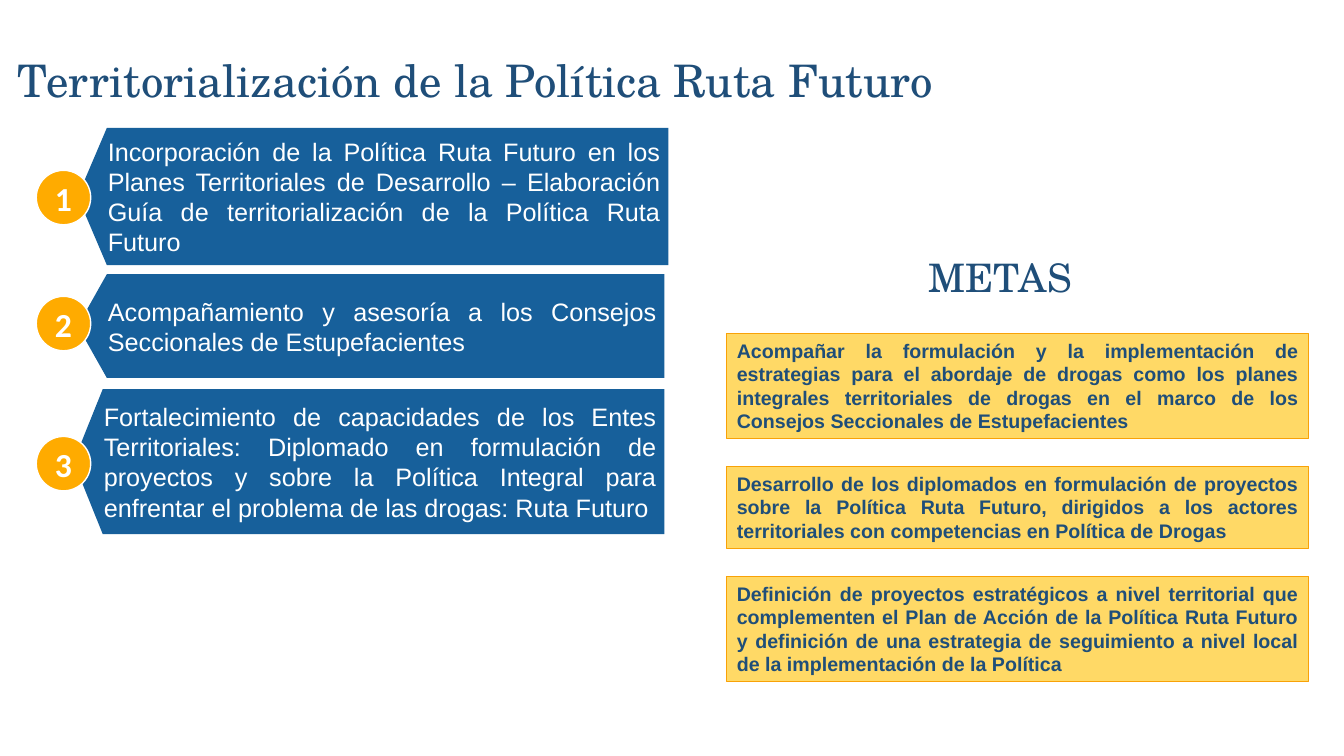
from pptx import Presentation, util as u
from pptx.dml.color import RGBColor
from pptx.enum import shapes, text

NAVY = RGBColor(0x1F, 0x4E, 0x79)
BLUE = RGBColor(0x17, 0x60, 0x9B)
AMBER = RGBColor(0xFF, 0xAB, 0x00)
ORANGE = RGBColor(0xF8, 0xA2, 0x08)
YELLOW = RGBColor(0xFF, 0xD9, 0x66)
WHITE = RGBColor(0xFF, 0xFF, 0xFF)
SERIF = "TeX Gyre Schola"

WIDTH, HEIGHT = u.Inches(13.33), u.Inches(7.5)
COLUMNS, ROWS = 1333, 750

TITLE = "Territorialización de la Política Ruta Futuro"
GOALS_TITLE = "METAS"
# left, top, right, bottom, badge top, wording
ACTIONS = [
    (77, 127, 663, 263, 169,
     "Incorporación de la Política Ruta Futuro en los Planes Territoriales de "
     "Desarrollo – Elaboración Guía de territorialización de la Política Ruta Futuro"),
    (77, 272, 659, 375, 294,
     "Acompañamiento y asesoría a los Consejos Seccionales de Estupefacientes"),
    (73, 386, 659, 530, 433,
     "Fortalecimiento de capacidades de los Entes Territoriales: Diplomado en "
     "formulación de proyectos y sobre la Política Integral para enfrentar el "
     "problema de las drogas: Ruta Futuro"),
]
GOALS = [
    (104, "Acompañar la formulación y la implementación de estrategias para el "
          "abordaje de drogas como los planes integrales territoriales de drogas en "
          "el marco de los Consejos Seccionales de Estupefacientes"),
    (81, "Desarrollo de los diplomados en formulación de proyectos sobre la Política "
         "Ruta Futuro, dirigidos a los actores territoriales con competencias en "
         "Política de Drogas"),
    (104, "Definición de proyectos estratégicos a nivel territorial que complementen "
          "el Plan de Acción de la Política Ruta Futuro y definición de una "
          "estrategia de seguimiento a nivel local de la implementación de la Política"),
]
POINT_DEPTH = 29
BADGE_LEFT, BADGE_SIZE = 36, 54
GOAL_LEFT, GOAL_TOP, GOAL_WIDTH, GOAL_GAP = 721, 331, 577, 28


def across(columns):
    return round(WIDTH * columns / COLUMNS)


def down(rows):
    return round(HEIGHT * rows / ROWS)


def place(left, top, width, height):
    return across(left), down(top), across(width), down(height)


def paint(shape, fill, line=None, line_width=1):
    shape.shadow.inherit = False
    shape.fill.solid()
    shape.fill.fore_color.rgb = fill
    if line is None:
        shape.line.fill.background()
    else:
        shape.line.color.rgb = line
        shape.line.width = u.Pt(line_width)


def write(shape, wording, font, size, color, align, anchor, bold=False):
    frame = shape.text_frame
    frame.word_wrap = True
    frame.vertical_anchor = anchor
    para = frame.paragraphs[0]
    para.text = wording
    para.alignment = align
    para.font.name, para.font.size, para.font.bold = font, u.Pt(size), bold
    para.font.color.rgb = color


def add_action(page, number, left, top, right, bottom, badge_top, wording):
    shoulder = left + POINT_DEPTH
    outline = [(shoulder, bottom), (left, (top + bottom) / 2), (shoulder, top),
               (right, top)]
    builder = page.shapes.build_freeform(across(right), down(bottom))
    builder.add_line_segments([(across(x), down(y)) for x, y in outline])
    arrow = builder.convert_to_shape()
    paint(arrow, BLUE)
    frame = arrow.text_frame
    frame.margin_left, frame.margin_right = across(30), across(8)
    frame.margin_top = frame.margin_bottom = down(4)
    write(arrow, wording, "Arial", 18, WHITE, text.PP_ALIGN.JUSTIFY,
          text.MSO_ANCHOR.MIDDLE)

    badge = page.shapes.add_shape(
        shapes.MSO_SHAPE.OVAL, *place(BADGE_LEFT, badge_top, BADGE_SIZE, BADGE_SIZE))
    paint(badge, AMBER, WHITE)
    write(badge, str(number), "Calibri", 24, WHITE, text.PP_ALIGN.CENTER,
          text.MSO_ANCHOR.MIDDLE, bold=True)


def main():
    deck = Presentation()
    deck.slide_width, deck.slide_height = WIDTH, HEIGHT
    page = deck.slides.add_slide(deck.slide_layouts[6])

    title = page.shapes.add_textbox(*place(0, 47, 944, 64))
    write(title, TITLE, SERIF, 32, NAVY, text.PP_ALIGN.CENTER, text.MSO_ANCHOR.TOP)

    for number, action in enumerate(ACTIONS, 1):
        add_action(page, number, *action)

    heading = page.shapes.add_textbox(*place(786, 248, 412, 54))
    write(heading, GOALS_TITLE, SERIF, 28, NAVY, text.PP_ALIGN.CENTER,
          text.MSO_ANCHOR.MIDDLE)

    top = GOAL_TOP
    for height, wording in GOALS:
        box = page.shapes.add_shape(
            shapes.MSO_SHAPE.RECTANGLE, *place(GOAL_LEFT, top, GOAL_WIDTH, height))
        paint(box, YELLOW, ORANGE, 0.75)
        write(box, wording, "Arial", 14, NAVY, text.PP_ALIGN.JUSTIFY,
              text.MSO_ANCHOR.TOP, bold=True)
        top += height + GOAL_GAP

    deck.save("out.pptx")


if __name__ == "__main__":
    main()
